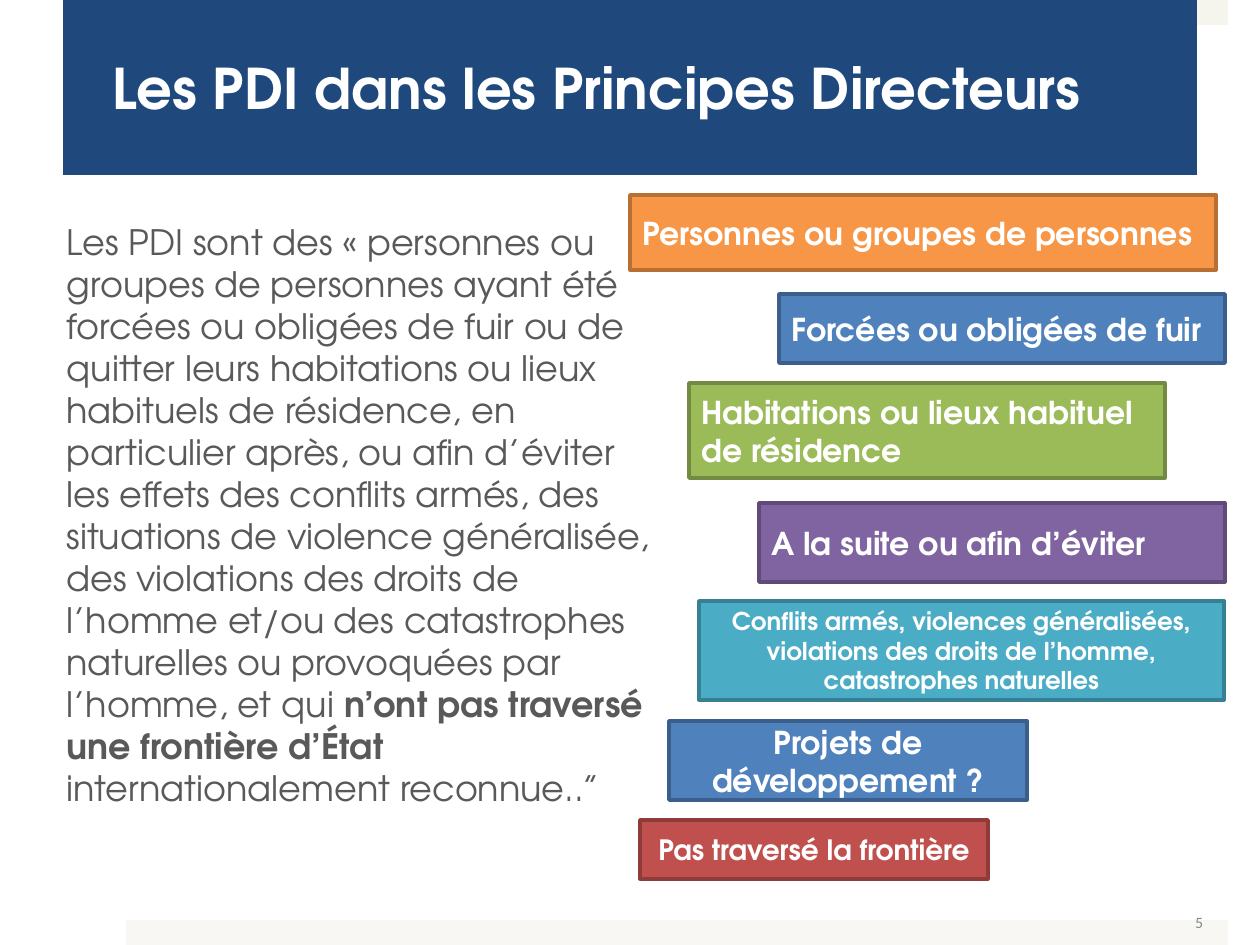
"""Build the slide on internally displaced persons in the Guiding Principles."""
from lxml.etree import SubElement
from pptx import Presentation
from pptx.dml.color import RGBColor
from pptx.enum.shapes import MSO_SHAPE
from pptx.enum.text import MSO_ANCHOR, MSO_AUTO_SIZE, PP_ALIGN
from pptx.oxml.ns import qn
from pptx.util import Emu, Pt

FONT = "TeX Gyre Adventor"
COLORS = {
    "white": "FFFFFF", "navy": "1F497D", "body": "595959", "number": "898989",
    "top band": "F5F4ED", "bottom band": "F8F7F3",
    "orange": "F79646", "orange line": "B76F34",
    "blue": "4F81BD", "blue line": "3A5F8C",
    "green": "9BBB59", "green line": "738A42",
    "purple": "8064A2", "purple line": "5F4A78",
    "teal": "4BACC6", "teal line": "377F92",
    "red": "C0504D", "red line": "8E3B39",
}
TITLE = "Les PDI dans les Principes Directeurs"
DEFINITION = [
    ("Les PDI sont des « personnes ou groupes de personnes ayant été forcées ou "
     "obligées de fuir ou de quitter leurs habitations ou lieux habituels de "
     "résidence, en particulier après, ou afin d’éviter les effets des conflits "
     "armés, des situations de violence généralisée, des violations des droits de "
     "l’homme et/ou des catastrophes naturelles ou provoquées par l’homme, et qui ", False),
    ("n’ont pas traversé une frontière d’État ", True),
    ("internationalement reconnue..”", False),
]
BANDS = [("top band", (126, 0, 1102, 25)), ("bottom band", (126, 920, 1102, 25))]
LEFT, CENTER = PP_ALIGN.LEFT, PP_ALIGN.CENTER
CRITERIA = [
    ("Personnes ou groupes de personnes", "orange", (630, 195, 586, 75), 18, LEFT),
    ("Forcées ou obligées de fuir", "blue", (779, 294, 446, 69), 18, LEFT),
    ("Habitations ou lieux habituel de résidence", "green", (689, 383, 476, 95), 18, LEFT),
    ("A la suite ou afin d’éviter", "purple", (759, 503, 466, 79), 18, LEFT),
    ("Conflits armés, violences généralisées, violations des droits de l’homme, "
     "catastrophes naturelles", "teal", (699, 601, 525, 99), 14, CENTER),
    ("Projets de développement ?", "blue", (669, 721, 358, 79), 18, CENTER),
    ("Pas traversé la frontière", "red", (640, 820, 348, 59), 16, CENTER),
]


def px(value):
    return Emu(round(value * 914400 / 126))


def color(name):
    return RGBColor.from_string(COLORS[name])


def style_font(font, size, color_name, bold=False, name=FONT):
    font.name, font.size, font.bold = name, Pt(size), bold
    font.color.rgb = color(color_name)


def add_box(slide, place, fill):
    shape = slide.shapes.add_shape(MSO_SHAPE.RECTANGLE, *map(px, place))
    shape.shadow.inherit = False
    shape.fill.solid()
    shape.fill.fore_color.rgb = color(fill)
    shape.line.fill.background()
    return shape


def add_bands(slide):
    for index, (name, place) in enumerate(BANDS):
        band = add_box(slide, place, name)
        slide.shapes.element.insert(2 + index, band.element)


def format_title(slide):
    title = slide.shapes.title
    title.left, title.top, title.width, title.height = map(px, (63, 0, 1134, 175))
    title.fill.solid()
    title.fill.fore_color.rgb = color("navy")
    frame = title.text_frame
    frame.text = TITLE
    frame.auto_size = MSO_AUTO_SIZE.NONE
    frame.vertical_anchor = MSO_ANCHOR.MIDDLE
    frame.margin_left, frame.margin_right = px(49), px(5)
    paragraph = frame.paragraphs[0]
    paragraph.alignment = LEFT
    style_font(paragraph.runs[0].font, 32, "white", True)


def add_definition(slide):
    frame = slide.shapes.add_textbox(*map(px, (54, 214, 609, 674))).text_frame
    frame.word_wrap = True
    for text, bold in DEFINITION:
        run = frame.paragraphs[0].add_run()
        run.text = text
        style_font(run.font, 20, "body", bold)


def add_criterion(slide, text, fill, place, size, alignment):
    shape = add_box(slide, place, fill)
    shape.line.color.rgb = color(f"{fill} line")
    shape.line.width = Pt(2)
    frame = shape.text_frame
    frame.text = text
    frame.word_wrap = True
    frame.vertical_anchor = MSO_ANCHOR.MIDDLE
    paragraph = frame.paragraphs[0]
    paragraph.alignment = alignment
    style_font(paragraph.runs[0].font, size, "white", True)


def add_slide_number(slide):
    frame = slide.shapes.add_textbox(*map(px, (919, 897, 293, 50))).text_frame
    frame.word_wrap = True
    frame.vertical_anchor = MSO_ANCHOR.MIDDLE
    frame.margin_left = frame.margin_right = px(9)
    frame.margin_top = frame.margin_bottom = px(5)
    paragraph = frame.paragraphs[0]
    paragraph.alignment = PP_ALIGN.RIGHT
    run = paragraph.add_run()
    run.text = "5"
    style_font(run.font, 9, "number", name="Calibri")
    field = SubElement(paragraph.runs[0].font._element.getparent().getparent(), qn("a:fld"),
                       id="{B6F15528-21DE-4FAA-801E-634DDDAF4B2B}", type="slidenum")
    source = field.getprevious()
    field.extend(list(source))
    field.getparent().remove(source)


def main():
    presentation = Presentation()
    presentation.slide_width, presentation.slide_height = px(1260), px(945)
    first = presentation.slides._sldIdLst.getparent()
    first.set("firstSlideNum", "5")
    slide = presentation.slides.add_slide(presentation.slide_layouts[5])
    add_bands(slide)
    format_title(slide)
    add_definition(slide)
    for criterion in CRITERIA:
        add_criterion(slide, *criterion)
    add_slide_number(slide)
    presentation.save("out.pptx")


if __name__ == "__main__":
    main()
